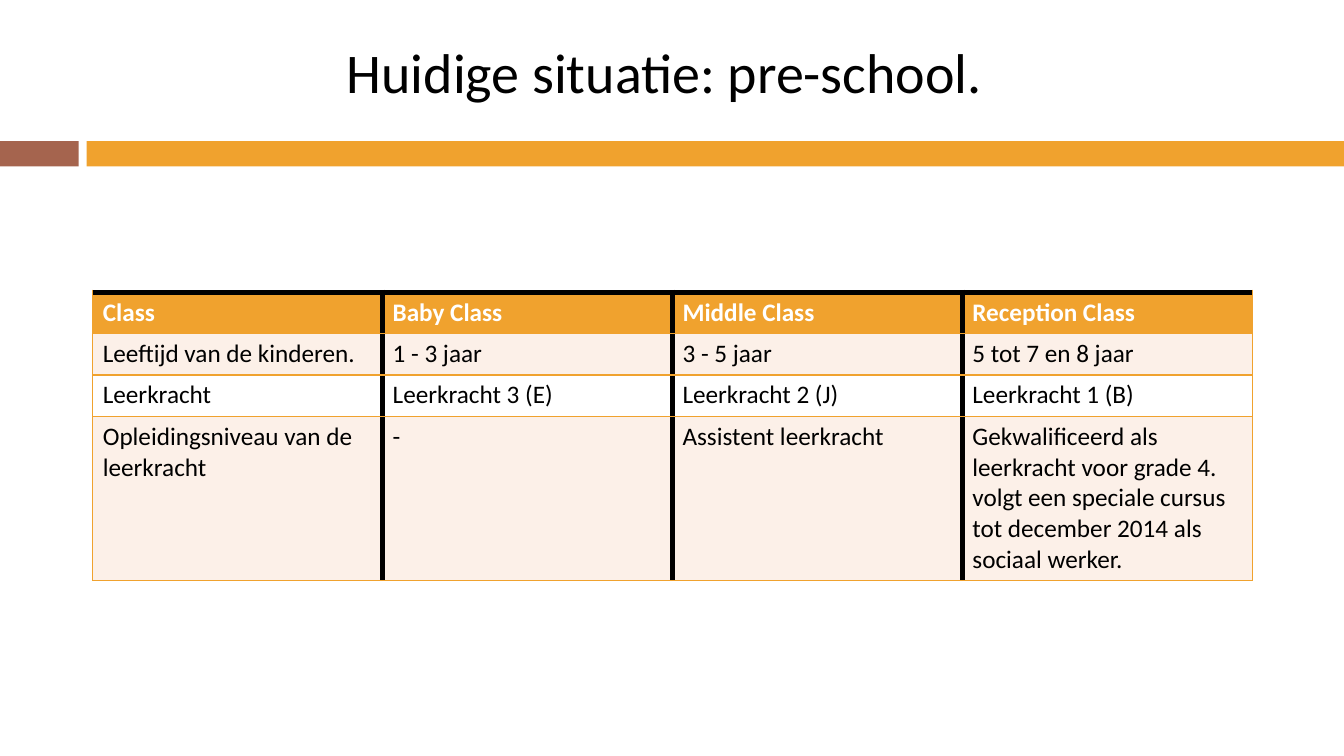
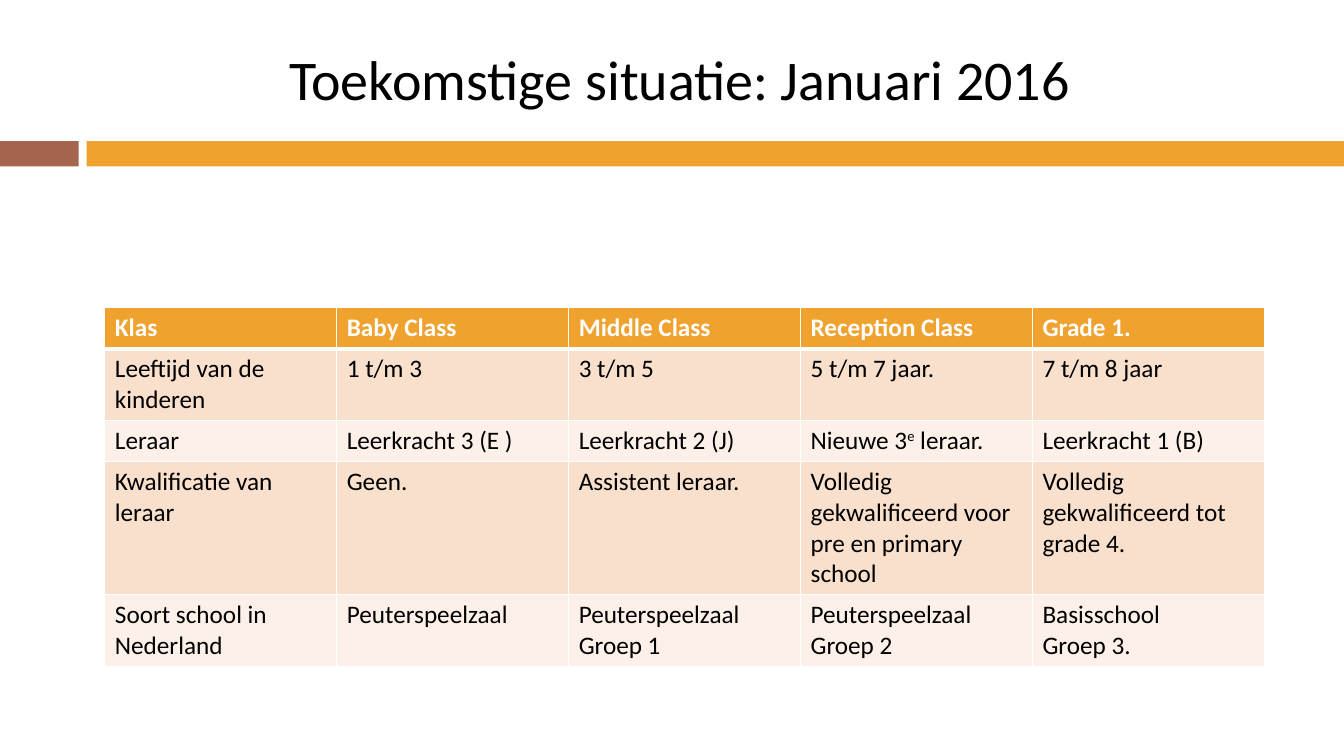
"""Build two slides comparing the current and future pre-school classes."""
import pptx
import pptx.dml.color
import pptx.enum.shapes
import pptx.enum.text
import pptx.oxml
import pptx.oxml.ns
import pptx.util

Inches = pptx.util.Inches
Pt = pptx.util.Pt
FONT = "Calibri"
ORANGE, BROWN, BLACK, WHITE = "F0A22E", "A5644E", "000000", "FFFFFF"
PALE, PEACH = "FCF0E8", "F9E0CD"
TABLE_WIDTH = 11.5


def paint(color_format, color):
    color_format.rgb = pptx.dml.color.RGBColor.from_string(color)


def write(paragraph, text, size, color, bold=False):
    """Write the text, raising what stands between carets."""
    for part_index, part in enumerate(text.split("^")):
        run = paragraph.add_run()
        run.text = part
        for attribute, value in {"name": FONT, "size": Pt(size), "bold": bold}.items():
            setattr(run.font, attribute, value)
        paint(run.font.color, color)
        if part_index % 2:
            run.font._element.set("baseline", "30000")


situations = [
    {
        "title": "Huidige situatie: pre-school.",
        "title_box": (2.95, 0.32, 7.28, 0.77),
        "table_at": (0.92, 2.9),
        "row_heights": [0.41, 0.41, 0.41, 1.63],
        "bands": [PALE, WHITE],
        "outer_side": (ORANGE, 1),
        "inner_side": (BLACK, 4.5),
        "top": (BLACK, 4.5),
        "under_header": (ORANGE, 1),
        "row_line": (ORANGE, 1),
        "rows": [
            ["Class", "Baby Class", "Middle Class", "Reception Class"],
            ["Leeftijd van de kinderen.", "1 - 3 jaar", "3 - 5 jaar", "5 tot 7 en 8 jaar"],
            ["Leerkracht", "Leerkracht 3 (E)", "Leerkracht 2 (J)", "Leerkracht 1 (B)"],
            ["Opleidingsniveau van de leerkracht", "-", "Assistent leerkracht",
             "Gekwalificeerd als leerkracht voor grade 4. volgt een speciale cursus "
             "tot december 2014 als sociaal werker."],
        ],
    },
    {
        "title": "Toekomstige situatie: Januari 2016",
        "title_box": (2.32, 0.39, 8.84, 0.77),
        "table_at": (1.04, 3.05),
        "row_heights": [0.41, 0.71, 0.41, 1.32, 0.71],
        "bands": [PEACH, PALE],
        "outer_side": (WHITE, 1),
        "inner_side": (WHITE, 1),
        "top": (WHITE, 1),
        "under_header": (WHITE, 3),
        "row_line": (WHITE, 1),
        "rows": [
            ["Klas", "Baby Class", "Middle Class", "Reception Class", "Grade 1."],
            ["Leeftijd van de kinderen", "1 t/m 3", "3 t/m 5", "5 t/m 7 jaar.", "7 t/m 8 jaar"],
            ["Leraar", "Leerkracht 3 (E )", "Leerkracht 2 (J)", "Nieuwe 3^e^ leraar.",
             "Leerkracht 1 (B)"],
            ["Kwalificatie van leraar", "Geen.", "Assistent leraar.",
             "Volledig gekwalificeerd voor pre en primary school",
             "Volledig gekwalificeerd tot grade 4."],
            ["Soort school in Nederland", "Peuterspeelzaal", "Peuterspeelzaal\nGroep 1",
             "Peuterspeelzaal\nGroep 2", "Basisschool\nGroep 3."],
        ],
    },
]

presentation = pptx.Presentation()
presentation.slide_width, presentation.slide_height = Inches(13.33), Inches(7.5)
blank = presentation.slide_layouts[6]

for situation in situations:
    slide = presentation.slides.add_slide(blank)

    for left, width, color in [(0, 0.78, BROWN), (0.86, 12.47, ORANGE)]:
        band = slide.shapes.add_shape(
            pptx.enum.shapes.MSO_SHAPE.RECTANGLE,
            Inches(left), Inches(1.4), Inches(width), Inches(0.25))
        band.shadow.inherit = False
        band.fill.solid()
        paint(band.fill.fore_color, color)
        band.line.fill.background()

    rows = situation["rows"]
    last_row, last_column = len(rows) - 1, len(rows[0]) - 1
    left, top = situation["table_at"]
    classes = slide.shapes.add_table(
        len(rows), len(rows[0]), Inches(left), Inches(top),
        Inches(TABLE_WIDTH), Inches(sum(situation["row_heights"]))).table
    classes.horz_banding = False
    for column in classes.columns:
        column.width = Inches(TABLE_WIDTH / len(rows[0]))

    for row_index, row in enumerate(rows):
        classes.rows[row_index].height = Inches(situation["row_heights"][row_index])
        header = row_index == 0
        above = ("top", "under_header")[row_index] if row_index < 2 else "row_line"
        below = "under_header" if header else "row_line"
        for column_index, text in enumerate(row):
            cell = classes.cell(row_index, column_index)
            cell.fill.solid()
            paint(cell.fill.fore_color,
                  ORANGE if header else situation["bands"][(row_index - 1) % 2])
            for line_index, line in enumerate(text.split("\n")):
                frame = cell.text_frame
                paragraph = frame.add_paragraph() if line_index else frame.paragraphs[0]
                write(paragraph, line, 18, WHITE if header else BLACK, header)
            borders = {
                "lnL": "outer_side" if column_index == 0 else "inner_side",
                "lnR": "outer_side" if column_index == last_column else "inner_side",
                "lnT": above,
                "lnB": below,
            }
            for position, (tag, border) in enumerate(borders.items()):
                color, points = situation[border]
                cell._tc.get_or_add_tcPr().insert(position, pptx.oxml.parse_xml(
                    f'<a:{tag} {pptx.oxml.ns.nsdecls("a")} w="{Pt(points)}">'
                    f'<a:solidFill><a:srgbClr val="{color}"/></a:solidFill></a:{tag}>'))

    title = slide.shapes.add_textbox(*map(Inches, situation["title_box"])).text_frame
    title.word_wrap = False
    title.auto_size = pptx.enum.text.MSO_AUTO_SIZE.SHAPE_TO_FIT_TEXT
    title.paragraphs[0].alignment = pptx.enum.text.PP_ALIGN.CENTER
    write(title.paragraphs[0], situation["title"], 40, BLACK)

presentation.save("out.pptx")
